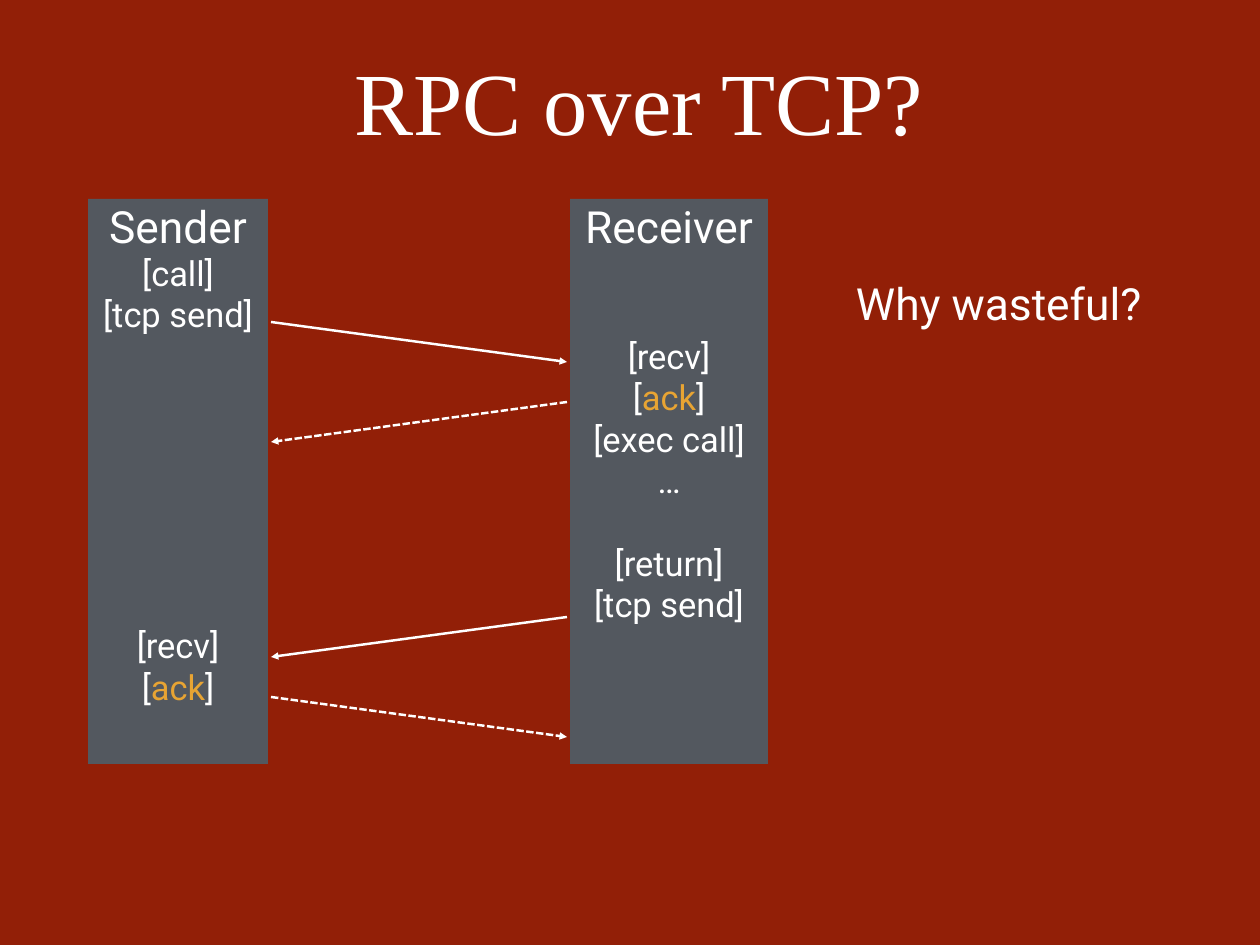
from lxml.etree import SubElement
from pptx import Presentation
from pptx.dml.color import RGBColor
from pptx.enum.dml import MSO_LINE
from pptx.enum.shapes import MSO_CONNECTOR, MSO_SHAPE
from pptx.enum.text import MSO_ANCHOR, MSO_AUTO_SIZE, PP_ALIGN
from pptx.oxml.ns import qn
from pptx.util import Pt

EMU_PER_PIXEL = 10321


def px(length):
    return length * EMU_PER_PIXEL


def color(value):
    return RGBColor.from_string(value)


class SlideBuilder:
    background = "921F07"
    column_fill = "53585F"
    text_color = "FFFFFF"
    ack_color = "E8A433"
    body_font = "Roboto"
    title_font = "Times New Roman"
    heading_size = 36
    step_size = 28
    step_pitch = 33.6

    def __init__(self, presentation):
        self.slide = presentation.slides.add_slide(presentation.slide_layouts[6])
        fill = self.slide.background.fill
        fill.solid()
        fill.fore_color.rgb = color(self.background)

    def prepare_frame(self, shape):
        frame = shape.text_frame
        frame.margin_left = frame.margin_right = 0
        frame.margin_top = frame.margin_bottom = 0
        frame.word_wrap = False
        frame.auto_size = MSO_AUTO_SIZE.SHAPE_TO_FIT_TEXT
        frame.vertical_anchor = MSO_ANCHOR.TOP
        return frame

    def set_text(self, paragraph, text, size, font, alignment):
        paragraph.alignment = alignment
        paragraph.font.size = Pt(size)
        paragraph.font.name = font
        paragraph.font.color.rgb = color(self.text_color)
        for part in filter(None, text.partition("ack")):
            run = paragraph.add_run()
            run.text = part
            if part == "ack":
                run.font.color.rgb = color(self.ack_color)

    def title(self, text, left, top, width, height):
        shape = self.slide.shapes.add_textbox(px(left), px(top), px(width), px(height))
        frame = shape.text_frame
        frame.word_wrap = True
        frame.vertical_anchor = MSO_ANCHOR.MIDDLE
        self.set_text(frame.paragraphs[0], text, 72, self.title_font, PP_ALIGN.CENTER)

    def remark(self, text, left, top, width, height):
        shape = self.slide.shapes.add_textbox(px(left), px(top), px(width), px(height))
        frame = self.prepare_frame(shape)
        self.set_text(frame.paragraphs[0], text, self.heading_size, self.body_font,
                      PP_ALIGN.LEFT)

    def column(self, heading, steps, left, top, width, height):
        shape = self.slide.shapes.add_shape(
            MSO_SHAPE.RECTANGLE, px(left), px(top), px(width), px(height))
        shape.shadow.inherit = False
        shape.fill.solid()
        shape.fill.fore_color.rgb = color(self.column_fill)
        shape.line.fill.background()
        frame = self.prepare_frame(shape)
        self.set_text(frame.paragraphs[0], heading, self.heading_size, self.body_font,
                      PP_ALIGN.CENTER)
        for skipped_rows, text in steps:
            paragraph = frame.add_paragraph()
            paragraph.space_before = Pt(skipped_rows * self.step_pitch)
            self.set_text(paragraph, text, self.step_size, self.body_font, PP_ALIGN.CENTER)

    def arrow(self, start_x, start_y, end_x, end_y, dashed):
        connector = self.slide.shapes.add_connector(
            MSO_CONNECTOR.STRAIGHT, px(start_x), px(start_y), px(end_x), px(end_y))
        connector.line.color.rgb = color(self.text_color)
        connector.line.width = Pt(2)
        if dashed:
            connector.line.dash_style = MSO_LINE.SQUARE_DOT
        properties = connector._element.spPr
        SubElement(properties.find(qn("a:ln")), qn("a:tailEnd"), type="triangle")
        SubElement(properties, qn("a:effectLst"))


def main():
    presentation = Presentation()
    presentation.slide_width = px(1260)
    presentation.slide_height = px(945)
    builder = SlideBuilder(presentation)

    sender_steps = [(0, "[call]"), (0, "[tcp send]"), (7, "[recv]"), (0, "[ack]")]
    receiver_steps = [(2, "[recv]"), (0, "[ack]"), (0, "[exec call]"), (0, "…"),
                      (1, "[return]"), (0, "[tcp send]")]
    builder.column("Sender", sender_steps, 88, 199, 180, 565)
    builder.column("Receiver", receiver_steps, 570, 199, 198, 565)

    sender_edge, receiver_edge, drop = 271, 567, 40
    messages = [(322, True, False), (402, False, True),
                (617, False, False), (697, True, True)]
    for top, from_sender, dashed in messages:
        start, end = sender_edge, receiver_edge
        if not from_sender:
            start, end = end, start
        builder.arrow(start, top, end, top + drop, dashed)

    builder.title("RPC over TCP?", 116, 12, 1046, 177)
    builder.remark("Why wasteful?", 856, 276, 294, 63)
    presentation.save("out.pptx")


if __name__ == "__main__":
    main()
